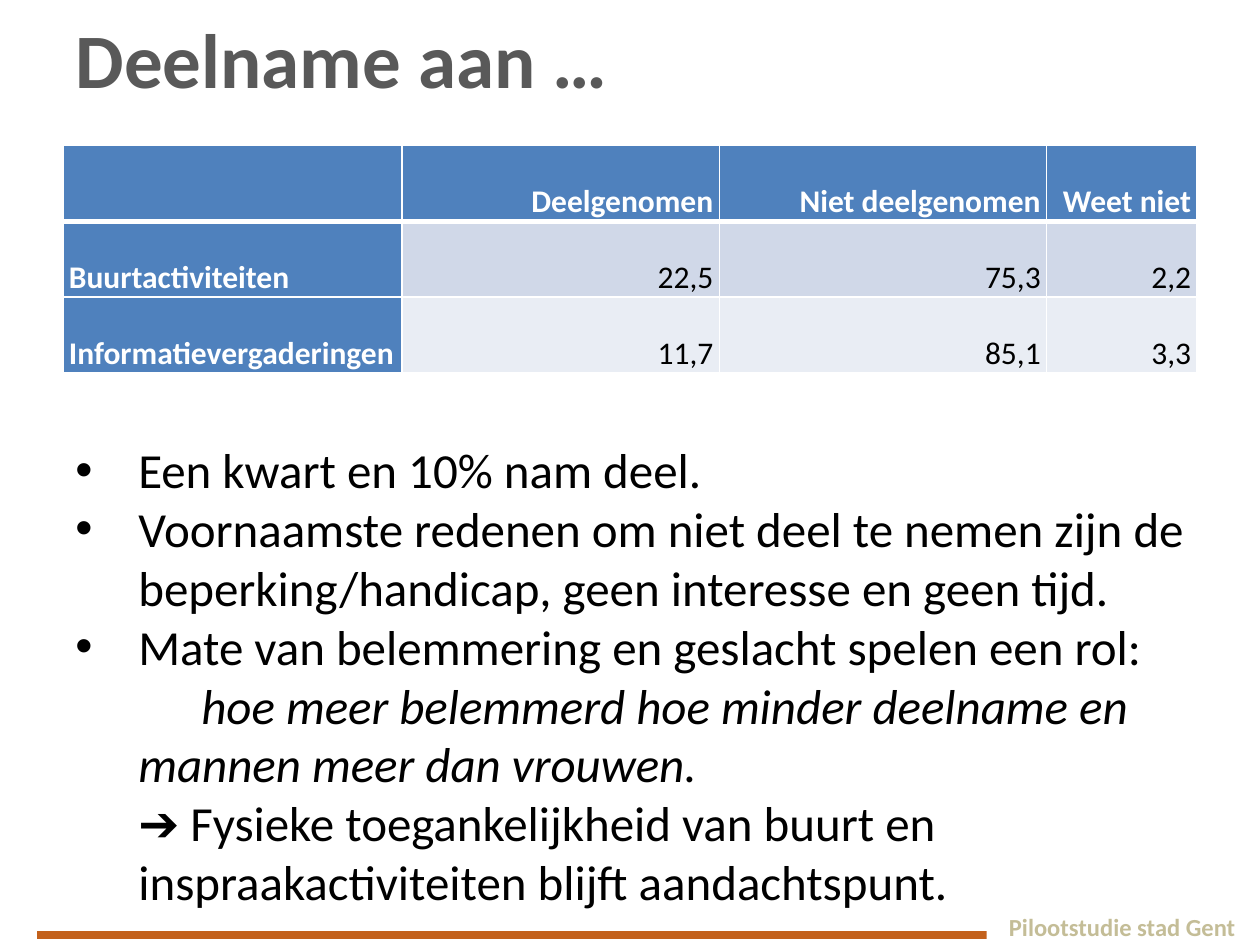
from lxml.etree import SubElement
from pptx import Presentation
from pptx.dml.color import RGBColor
from pptx.enum.shapes import MSO_SHAPE as Shape
from pptx.enum.text import MSO_ANCHOR as Anchor, MSO_AUTO_SIZE as AutoSize, PP_ALIGN as Align
from pptx.oxml.ns import qn
from pptx.util import Cm, Pt

WHITE = RGBColor(0xFF, 0xFF, 0xFF)
BLACK = RGBColor(0, 0, 0)
GREY = RGBColor(0x59, 0x59, 0x59)
ORANGE = RGBColor(0xC3, 0x61, 0x1C)
SAND = RGBColor(0xC4, 0xBD, 0x97)
BLUE = RGBColor(0x4F, 0x81, 0xBD)
BANDS = [RGBColor(0xD0, 0xD8, 0xE8), RGBColor(0xE9, 0xED, 0xF4)]

FONT = "Calibri"
INDENT = Cm(1.27)
COLUMN_WIDTHS = [6.83, 6.4, 6.6, 3.03]
ROW_HEIGHT = 1.53
ROWS = [
    ["", "Deelgenomen", "Niet deelgenomen", "Weet niet"],
    ["Buurtactiviteiten", "22,5", "75,3", "2,2"],
    ["Informatievergaderingen", "11,7", "85,1", "3,3"],
]
BULLETS = [
    "Een kwart en 10% nam deel.",
    "Voornaamste redenen om niet deel te nemen zijn de beperking/handicap, "
    "geen interesse en geen tijd.",
    "Mate van belemmering en geslacht spelen een rol:",
]
FINDING = "\thoe meer belemmerd hoe minder deelname en \tmannen meer dan vrouwen."
CONCLUSION = "➔ Fysieke toegankelijkheid van buurt en inspraakactiviteiten blijft aandachtspunt."


def write(paragraph, text, size, color=BLACK, bold=False, italic=False,
          align=Align.LEFT, spacing=None):
    paragraph.alignment = align
    if spacing:
        paragraph.line_spacing = spacing
    run = paragraph.add_run()
    run.text = text
    font = run.font
    font.name, font.size, font.bold, font.italic = FONT, Pt(size), bold, italic
    font.color.rgb = color


def add_bar(slide, left, top, width, height, color, line_width=None):
    bar = slide.shapes.add_shape(Shape.RECTANGLE, Cm(left), Cm(top), Cm(width), Cm(height))
    bar.shadow.inherit = False
    bar.fill.solid()
    bar.fill.fore_color.rgb = color
    if line_width:
        bar.line.color.rgb = WHITE
        bar.line.width = Pt(line_width)
    else:
        bar.line.fill.background()


def add_text_frame(slide, left, top, width, height):
    box = slide.shapes.add_textbox(Cm(left), Cm(top), Cm(width), Cm(height))
    box.text_frame.word_wrap = True
    return box.text_frame


def add_title(slide, text):
    title = slide.shapes.title
    title.left, title.top, title.width, title.height = Cm(1.27), Cm(0), Cm(22.86), Cm(2.34)
    title.text_frame.auto_size = AutoSize.NONE
    title.text_frame.vertical_anchor = Anchor.MIDDLE
    write(title.text_frame.paragraphs[0], text, 44, GREY, bold=True)


def set_border(cell, side, width):
    line = SubElement(cell._tc.get_or_add_tcPr(), qn(f"a:ln{side}"), w=str(Pt(width)))
    fill = SubElement(line, qn("a:solidFill"))
    SubElement(fill, qn("a:srgbClr"), val=str(WHITE))


def format_cell(cell, text, row, column):
    is_header = row == 0 or column == 0
    cell.margin_left = cell.margin_right = Cm(0.12)
    cell.margin_top = cell.margin_bottom = 0
    cell.vertical_anchor = Anchor.BOTTOM
    for side in "LRTB":
        under_header = (row, side) in [(0, "B"), (1, "T")]
        set_border(cell, side, 3 if under_header else 1)
    cell.fill.solid()
    cell.fill.fore_color.rgb = BLUE if is_header else BANDS[row - 1]
    if text:
        write(cell.text_frame.paragraphs[0], text, 18, WHITE if is_header else BLACK,
              bold=is_header, align=Align.RIGHT if column else Align.LEFT, spacing=1.15)


def add_participation_table(slide):
    table = slide.shapes.add_table(
        len(ROWS), len(COLUMN_WIDTHS), Cm(1.27), Cm(2.93),
        Cm(sum(COLUMN_WIDTHS)), Cm(ROW_HEIGHT * len(ROWS))).table
    for column, width in zip(table.columns, COLUMN_WIDTHS):
        column.width = Cm(width)
    for row_index, texts in enumerate(ROWS):
        table.rows[row_index].height = Cm(ROW_HEIGHT)
        for column_index, text in enumerate(texts):
            format_cell(table.cell(row_index, column_index), text, row_index, column_index)


def indent(paragraph, bulleted):
    properties = paragraph._p.get_or_add_pPr()
    properties.set("marL", str(INDENT))
    properties.set("indent", str(-INDENT if bulleted else 0))
    if bulleted:
        SubElement(properties, qn("a:buFont"), typeface="Arial")
        SubElement(properties, qn("a:buChar"), char="•")
    else:
        paragraph.level = 1
        SubElement(properties, qn("a:buNone"))


def add_findings(slide):
    frame = add_text_frame(slide, 1.27, 8.74, 22.86, 11.2)
    for index, text in enumerate(BULLETS + [FINDING, CONCLUSION]):
        paragraph = frame.paragraphs[0] if index == 0 else frame.add_paragraph()
        indent(paragraph, bulleted=text in BULLETS)
        write(paragraph, text, 28, italic=text == FINDING)


def add_footer(slide):
    add_bar(slide, 0.71, 18.72, 21.41, 0.25, ORANGE, line_width=2.25)
    add_bar(slide, 19.89, 18.54, 4.8, 0.51, WHITE)
    frame = add_text_frame(slide, 20.09, 18.26, 5.21, 0.86)
    frame.word_wrap = False
    write(frame.paragraphs[0], "Pilootstudie stad Gent", 14, SAND, bold=True)


def main():
    presentation = Presentation()
    presentation.slide_width, presentation.slide_height = Cm(25.4), Cm(19.05)
    slide = presentation.slides.add_slide(presentation.slide_layouts[5])
    add_footer(slide)
    add_title(slide, "Deelname aan …")
    add_participation_table(slide)
    add_findings(slide)
    presentation.save("out.pptx")


if __name__ == "__main__":
    main()
